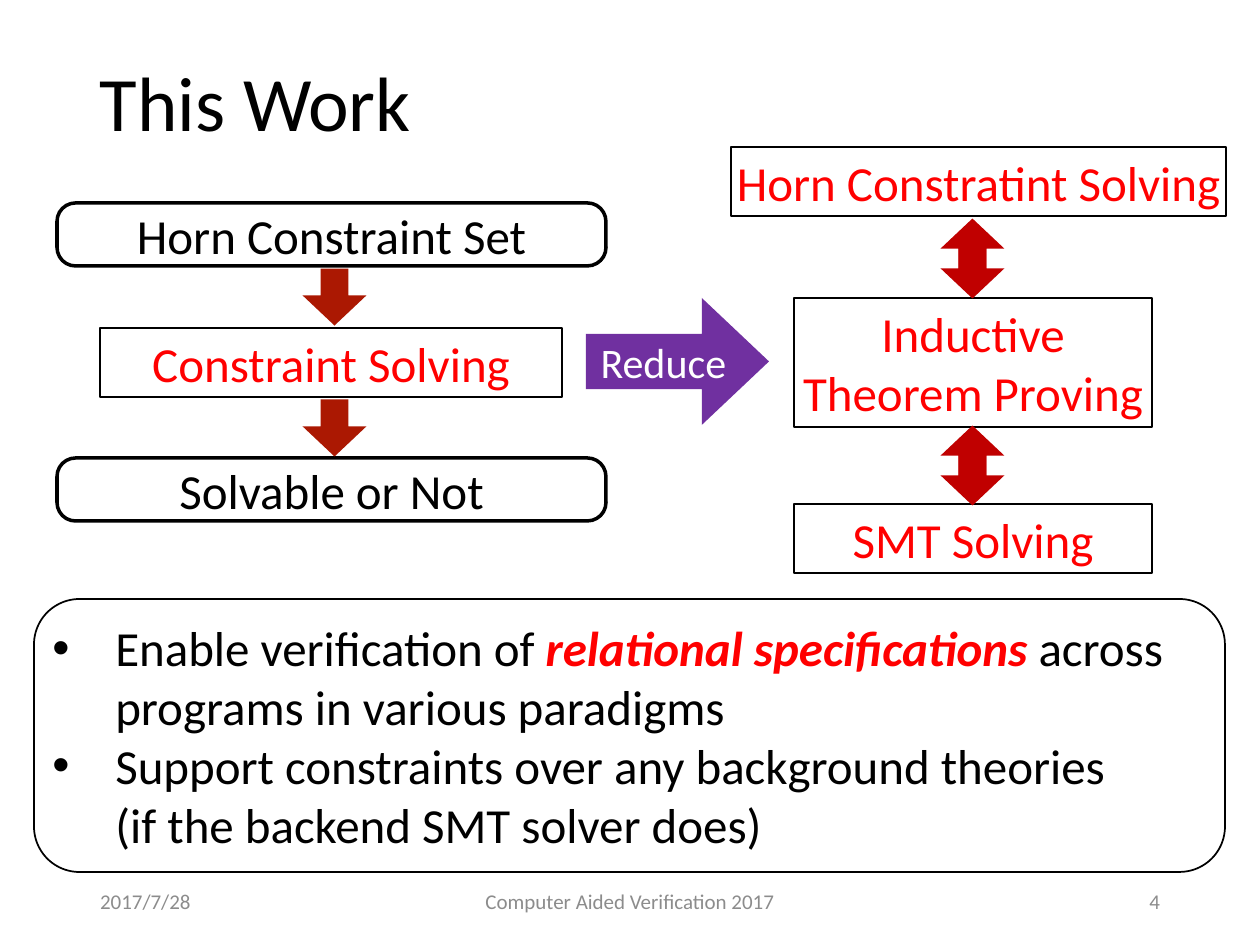
from pptx import Presentation
from pptx import util as u
from pptx.dml.color import RGBColor
from pptx.enum import shapes, text
from pptx.oxml.ns import qn
from lxml import etree

SCALE = 914400 / 126  # EMU per px
FONT = "Calibri"
BLACK = RGBColor(0, 0, 0)
WHITE = RGBColor(255, 255, 255)
RED = RGBColor(255, 0, 0)
GRAY = RGBColor(0x8C, 0x8C, 0x8C)
RUST = RGBColor(0xAB, 0x18, 0x02)
CRIMSON = RGBColor(0xC0, 0, 0)
PURPLE = RGBColor(0x70, 0x30, 0xA0)

KIND = shapes.MSO_SHAPE
LEFT, MID, RIGHT = text.PP_ALIGN.LEFT, text.PP_ALIGN.CENTER, text.PP_ALIGN.RIGHT


def px(n):
    return u.Emu(round(n * SCALE))


def add_bullet(par, indent):
    props = par._p.get_or_add_pPr()
    props.set("marL", str(px(indent)))
    props.set("indent", str(-px(indent)))
    font = etree.SubElement(props, qn("a:buFont"))
    font.set("typeface", "Arial")
    etree.SubElement(props, qn("a:buChar")).set("char", "•")


def write(shape, pars, size=28, color=BLACK, align=MID, inset=(5, 5),
          bullet=0, space=None):
    """Each paragraph is a list of (words, strong) runs, or a plain string."""
    frame = shape.text_frame
    frame.word_wrap = True
    frame.vertical_anchor = text.MSO_ANCHOR.MIDDLE
    frame.margin_left = frame.margin_right = px(inset[0])
    frame.margin_top = frame.margin_bottom = px(inset[1])
    for i, runs in enumerate(pars):
        par = frame.add_paragraph() if i else frame.paragraphs[0]
        par.alignment = align
        if space:
            par.line_spacing = space
        if bullet:
            add_bullet(par, bullet)
        for words, strong in [(runs, False)] if isinstance(runs, str) else runs:
            for j, line in enumerate(words.split("\n")):
                if j:
                    par.add_line_break()
                run = par.add_run()
                run.text = line
                font = run.font
                font.name, font.size = FONT, u.Pt(size)
                font.bold = font.italic = strong
                font.color.rgb = RED if strong else color


def label(slide, box, words, **form):
    shape = slide.shapes.add_textbox(*map(px, box))
    write(shape, [words], inset=(13, 6), **form)


def add_box(slide, box, pars, kind=KIND.RECTANGLE, line=1, round_by=None, **form):
    shape = slide.shapes.add_shape(kind, *map(px, box))
    shape.shadow.inherit = False
    shape.fill.solid()
    shape.fill.fore_color.rgb = WHITE
    shape.line.color.rgb = BLACK
    shape.line.width = u.Pt(line)
    if round_by:
        shape.adjustments[0] = round_by
    write(shape, pars, **form)


def arrow(slide, box, color, turn=0):
    shape = slide.shapes.add_shape(KIND.RIGHT_ARROW, *map(px, box))
    shape.shadow.inherit = False
    shape.fill.solid()
    shape.fill.fore_color.rgb = color
    shape.line.fill.background()
    shape.adjustments[0], shape.adjustments[1] = 0.435, 0.529
    shape.rotation = turn
    return shape


def main():
    deck = Presentation()
    deck.slide_width, deck.slide_height = px(1260), px(945)
    slide = deck.slides.add_slide(deck.slide_layouts[6])

    # Title and footer
    label(slide, (87, 15, 1086, 183), "This Work", size=44, align=LEFT, space=0.9)
    for x, wide, words, align in (
            (87, 283, "2017/7/28", LEFT),
            (417, 426, "Computer Aided Verification 2017", MID),
            (890, 283, "4", RIGHT)):
        label(slide, (x, 876, wide, 50), words, size=12, color=GRAY, align=align)

    # Left flow: input, solving, answer
    for y, words in ((203, "Horn Constraint Set"), (458, "Solvable or Not")):
        add_box(slide, (57, y, 549, 63), [words], KIND.ROUNDED_RECTANGLE,
                line=2, round_by=0.294)
    add_box(slide, (100, 328, 462, 69), ["Constraint Solving"], color=RED)
    for y in (265, 396):
        arrow(slide, (306, y, 57, 64), RUST, turn=90)

    # Reduction
    reduce = arrow(slide, (586, 298, 183, 127), PURPLE)
    write(reduce, [" Reduce"], size=24, color=WHITE, align=LEFT)

    # Right stack, with two-way arrows made of opposite pairs
    for box, words in (
            ((731, 147, 495, 69), "Horn Constratint Solving"),
            ((794, 298, 358, 129), "Inductive Theorem Proving"),
            ((794, 504, 358, 69), "SMT Solving")):
        add_box(slide, box, [words], color=RED)
    for y in (215, 422):
        arrow(slide, (944, y + 23, 57, 64), CRIMSON, turn=90)
        arrow(slide, (944, y, 57, 64), CRIMSON, turn=270)

    # Benefits
    add_box(slide, (34, 599, 1191, 273), [
        [("Enable verification of ", False),
         ("relational specifications ", True),
         ("across programs in various paradigms", False)],
        "Support constraints over any background theories\n"
        "(if the backend SMT solver does)",
    ], KIND.ROUNDED_RECTANGLE, align=LEFT, bullet=63)

    deck.save("out.pptx")


if __name__ == "__main__":
    main()
